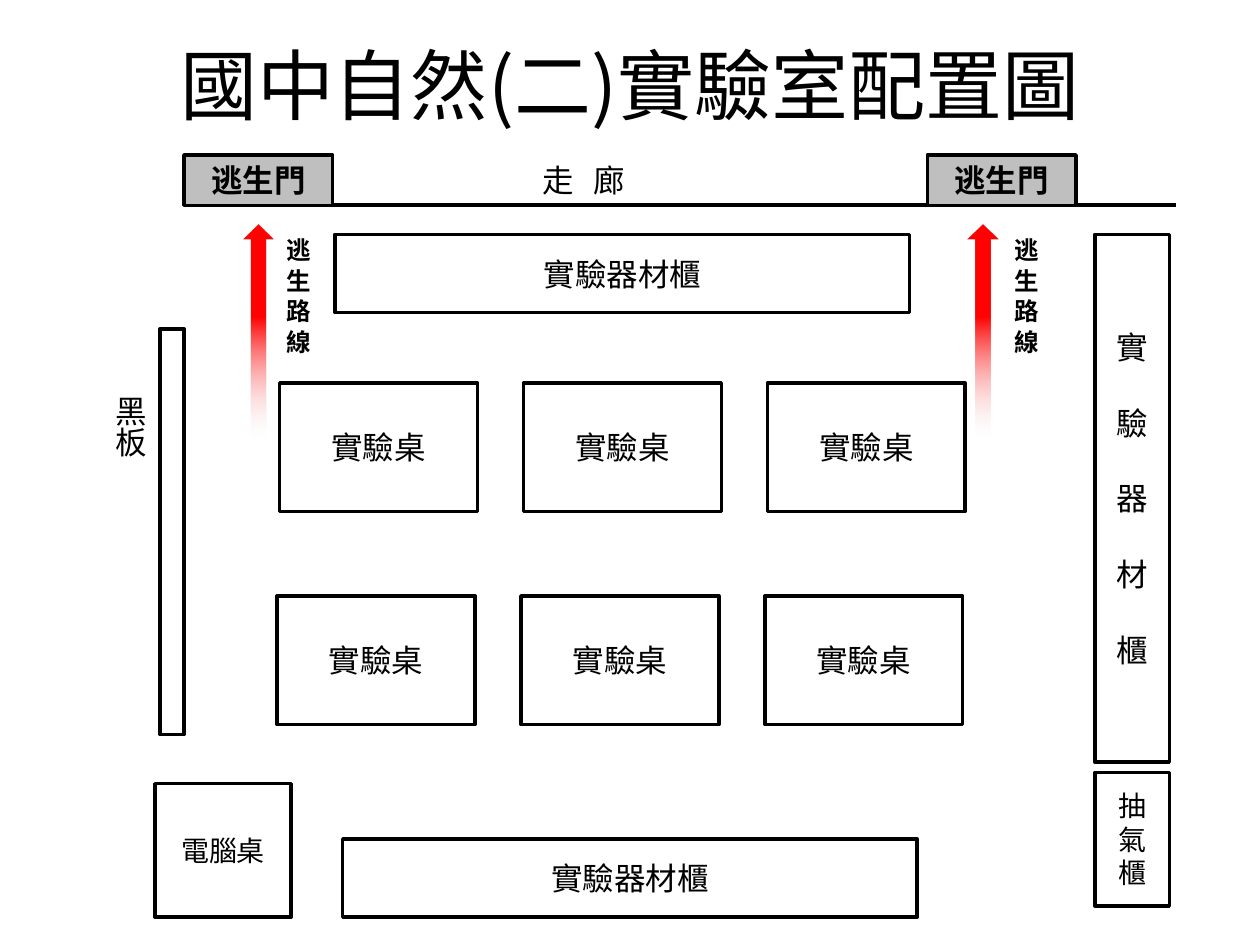
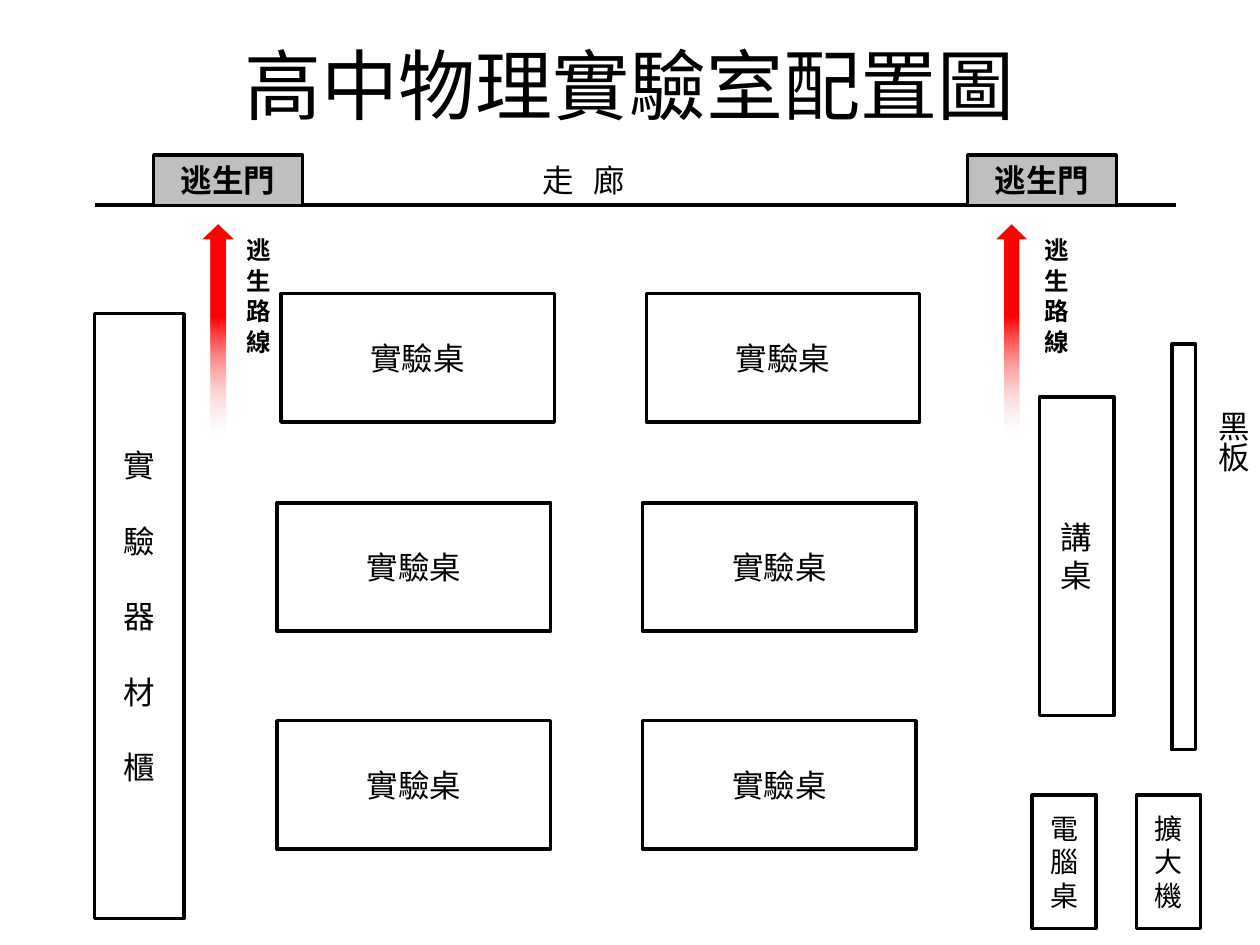
from lxml.etree import SubElement
from pptx import Presentation
from pptx.dml.color import RGBColor
from pptx.enum.shapes import MSO_CONNECTOR, MSO_SHAPE
from pptx.enum.text import MSO_ANCHOR, PP_ALIGN
from pptx.oxml import parse_xml
from pptx.oxml.ns import nsdecls, qn
from pptx.util import Inches, Pt

COLOURS = {"ink": "000000", "paper": "FFFFFF", "door": "BFBFBF",
           "route": "FF0000", "fade": "F6E1E1", "tail": "EEC2C1"}
FONT = "Noto Sans CJK SC"
LINE_HEIGHT = 1.2
WALL_Y, DOOR_W, DOOR_H = 1.63, 1.18, 0.4
ROUTE_STOPS = [(33, "route", 100), (77, "fade", 0), (100, "tail", 0)]

ROOMS = [
    {
        "title": "國中自然(二)實驗室配置圖",
        "walls": [(2.32, 7.44), (8.39, 9.33)],
        "doors": [1.46, 7.36],
        "routes": [(1.93, 2.09), (7.68, 7.87)],
        "board": (1.27, 2.61),
        "board_label_x": 0.73,
        "tables": {"size": (1.57, 1.02), "columns": 3, "pitch": 1.935,
                   "rows": [(2.22, 3.04), (2.2, 4.73)]},
        "cabinet": (8.69, 1.86, 0.59, 4.19),
        "furniture": [
            ("實驗器材櫃", 18, (2.66, 1.86, 4.56, 0.62)),
            ("實驗器材櫃", 18, (2.72, 6.66, 4.56, 0.62)),
            ("電腦桌", 16, (1.23, 6.22, 1.08, 1.06)),
            ("抽氣櫃", 16, (8.69, 6.13, 0.59, 1.06)),
        ],
    },
    {
        "title": "高中物理實驗室配置圖",
        "walls": [(0.75, 7.76), (8.39, 9.33)],
        "doors": [1.22, 7.68],
        "routes": [(1.61, 1.77), (7.91, 8.11)],
        "board": (9.3, 2.73),
        "board_label_x": 9.49,
        "tables": {"size": (2.17, 1.02), "columns": 2, "pitch": 2.9,
                   "rows": [(2.23, 2.33), (2.2, 3.99), (2.2, 5.72)]},
        "cabinet": (0.75, 2.49, 0.71, 4.8),
        "furniture": [
            ("講桌", 18, (8.25, 3.15, 0.59, 2.53)),
            ("電腦桌", 16, (8.19, 6.31, 0.51, 1.06)),
            ("擴大機", 16, (9.02, 6.31, 0.51, 1.06)),
        ],
    },
]


def colour(name):
    return RGBColor.from_string(COLOURS[name])


def inches(*lengths):
    return [Inches(length) for length in lengths]


def write(paragraph, text, size, bold=False):
    run = paragraph.add_run()
    run.text = text
    run.font.size = Pt(size)
    run.font.bold = bold
    run.font.color.rgb = colour("ink")
    run.font.name = FONT
    properties = run.font._element
    SubElement(properties, qn("a:ea")).set("typeface", FONT)
    return properties


def add_block(slide, place, text="", size=18, fill="paper", bold=False, spread=False):
    block = slide.shapes.add_shape(MSO_SHAPE.RECTANGLE, *inches(*place))
    block.shadow.inherit = False
    block.fill.solid()
    block.fill.fore_color.rgb = colour(fill)
    block.line.color.rgb = colour("ink")
    block.line.width = Pt(2)
    frame = block.text_frame
    frame.vertical_anchor = MSO_ANCHOR.MIDDLE
    for index, part in enumerate(text if spread else [text] if text else []):
        paragraph = frame.add_paragraph() if index else frame.paragraphs[0]
        paragraph.alignment = PP_ALIGN.CENTER
        paragraph.line_spacing = Pt(size * LINE_HEIGHT)
        if index:
            paragraph.space_before = Pt(size * LINE_HEIGHT)
        write(paragraph, part, size, bold)


def add_label(slide, place, text, size=18, bold=False, vertical=False, wrap=False):
    frame = slide.shapes.add_textbox(*inches(*place)).text_frame
    frame.word_wrap = wrap
    if vertical:
        frame._txBody.bodyPr.set("vert", "eaVert")
    return write(frame.paragraphs[0], text, size, bold)


def add_wall(slide, start, end):
    wall = slide.shapes.add_connector(
        MSO_CONNECTOR.STRAIGHT, *inches(start, WALL_Y, end, WALL_Y))
    wall.line.color.rgb = colour("ink")
    wall.line.width = Pt(2.25)
    SubElement(wall._element.spPr, qn("a:effectLst"))


def add_route(slide, arrow_x, label_x):
    arrow = slide.shapes.add_shape(MSO_SHAPE.UP_ARROW, *inches(arrow_x, 1.78, 0.24, 2.2))
    arrow.shadow.inherit = False
    arrow.line.fill.background()
    stops = "".join(
        f'<a:gs pos="{share * 1000}"><a:srgbClr val="{COLOURS[name]}">'
        f'<a:alpha val="{opacity * 1000}"/></a:srgbClr></a:gs>'
        for share, name, opacity in ROUTE_STOPS)
    gradient = parse_xml(
        f'<a:gradFill {nsdecls("a")} rotWithShape="1"><a:gsLst>{stops}</a:gsLst>'
        '<a:lin ang="5400000" scaled="0"/></a:gradFill>')
    arrow._element.spPr.find(qn("a:prstGeom")).addnext(gradient)
    add_label(slide, (label_x, 1.79, 0.44, 1.03), "逃 生 路 線", 14, True, vertical=True)


def add_title(slide, text):
    title = slide.shapes.title
    title.left, title.top, title.width, title.height = inches(0.75, -0.14, 8.5, 1.61)
    title.text_frame.vertical_anchor = MSO_ANCHOR.MIDDLE
    paragraph = title.text_frame.paragraphs[0]
    paragraph.alignment = PP_ALIGN.CENTER
    write(paragraph, text, 44)


def add_room(deck, room):
    slide = deck.slides.add_slide(deck.slide_layouts[5])
    add_title(slide, room["title"])
    for start, end in room["walls"]:
        add_wall(slide, start, end)
    for x in room["doors"]:
        add_block(slide, (x, WALL_Y - DOOR_H, DOOR_W, DOOR_H), "逃生門", fill="door", bold=True)
    corridor = add_label(slide, (4.21, WALL_Y - DOOR_H, 0.9, 0.4), "走 廊")
    corridor.set("spc", "350")
    for arrow_x, label_x in room["routes"]:
        add_route(slide, arrow_x, label_x)

    board_x, board_y = room["board"]
    add_block(slide, (board_x, board_y, 0.19, 3.22))
    add_label(slide, (room["board_label_x"], board_y + 0.43, 0.5, 2.12), "黑板",
              vertical=True, wrap=True)

    tables = room["tables"]
    for left, top in tables["rows"]:
        for column in range(tables["columns"]):
            add_block(slide, (left + column * tables["pitch"], top, *tables["size"]), "實驗桌")
    add_block(slide, room["cabinet"], "實驗器材櫃", spread=True)
    for text, size, place in room["furniture"]:
        add_block(slide, place, text, size)


def main():
    deck = Presentation()
    deck.slide_width, deck.slide_height = inches(10, 7.5)
    for room in ROOMS:
        add_room(deck, room)
    deck.save("out.pptx")


if __name__ == "__main__":
    main()
